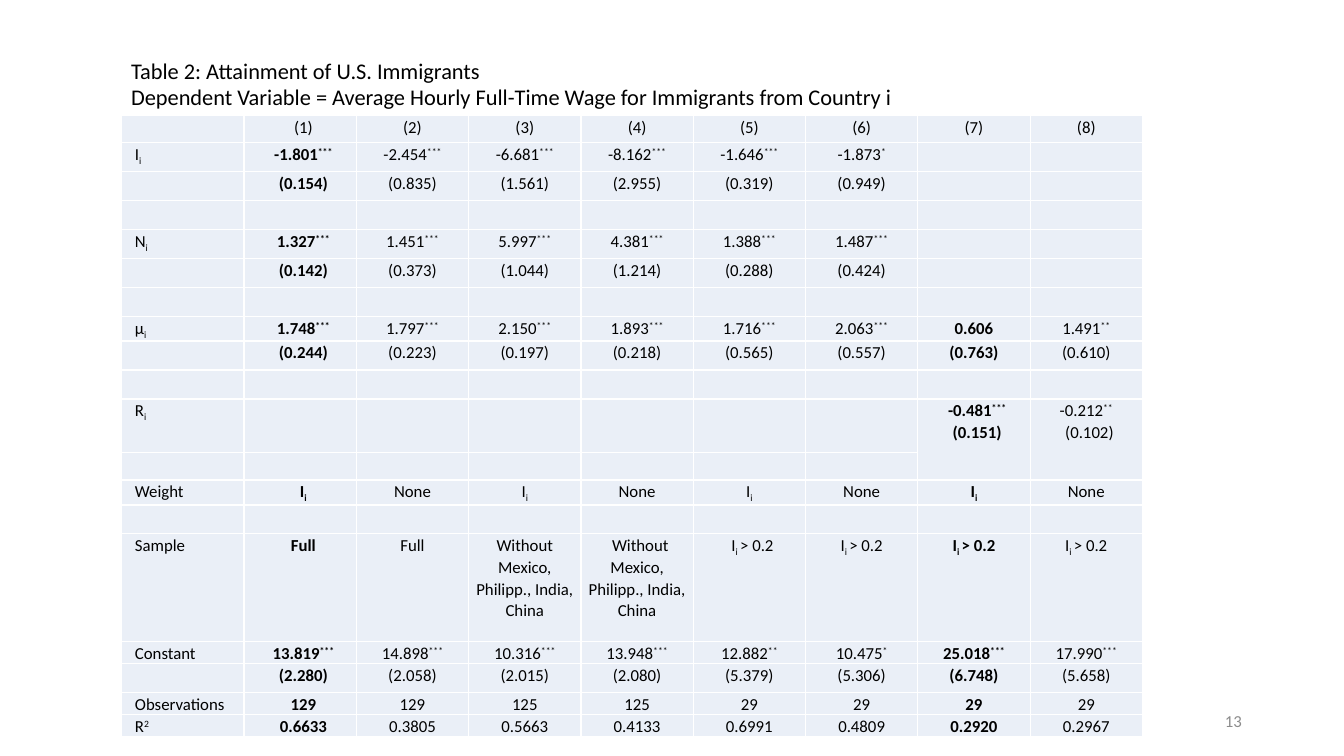
"""Build a slide with a regression table on the wages of immigrants."""
from dataclasses import dataclass

from lxml import etree
from pptx import Presentation
from pptx.dml.color import RGBColor
from pptx.enum.text import MSO_ANCHOR, MSO_AUTO_SIZE, PP_ALIGN
from pptx.oxml.ns import qn
from pptx.util import Cm, Pt

LEFT, CENTER, RIGHT = PP_ALIGN.LEFT, PP_ALIGN.CENTER, PP_ALIGN.RIGHT
TOP, MIDDLE = MSO_ANCHOR.TOP, MSO_ANCHOR.MIDDLE
NO_AUTOFIT = MSO_AUTO_SIZE.NONE


@dataclass(frozen=True)
class Theme:
    font: str = "Calibri"
    ink: str = "000000"
    muted: str = "8C8C8C"
    cell: str = "EAEFF7"
    title_size: int = 16
    table_size: int = 12
    number_size: int = 12


THEME = Theme()
TITLE = ("Table 2: Attainment of U.S. Immigrants\n"
         "Dependent Variable = Average Hourly Full-Time Wage for Immigrants from Country i")
PAGE_NUMBER = "13"

BIG_SOURCES = "Without Mexico, Philipp., India, China"
LARGE_SHARE = "I_i |> 0.2"
BLANK = (0.73, [])
ROWS = [
    (0.68, ["", "(1)", "(2)", "(3)", "(4)", "(5)", "(6)", "(7)", "(8)"]),
    (0.73, ["I_i", "-1.801^***", "-2.454^***", "-6.681^***", "-8.162^***", "-1.646^***", "-1.873^*"]),
    (0.73, ["", "(0.154)", "(0.835)", "(1.561)", "(2.955)", "(0.319)", "(0.949)"]),
    BLANK,
    (0.73, ["N_i", "1.327^***", "1.451^***", "5.997^***", "4.381^***", "1.388^***", "1.487^***"]),
    (0.73, ["", "(0.142)", "(0.373)", "(1.044)", "(1.214)", "(0.288)", "(0.424)"]),
    BLANK,
    (0.6, ["μ_i", "1.748^***", "1.797^***", "2.150^***", "1.893^***", "1.716^***", "2.063^***",
           "0.606", "1.491^**"]),
    (0.73, ["", "(0.244)", "(0.223)", "(0.197)", "(0.218)", "(0.565)", "(0.557)", "(0.763)", "(0.610)"]),
    BLANK,
    (1.34, ["R_i", "", "", "", "", "", "", "-0.481^***\n(0.151)", "-0.212^**\n(0.102)"]),
    (0.7, []),
    (0.63, ["Weight"] + ["I_i", "None"] * 4),
    BLANK,
    (2.72, ["Sample", "Full", "Full"] + [BIG_SOURCES] * 2 + [LARGE_SHARE] * 4),
    (0.55, ["Constant", "13.819^***", "14.898^***", "10.316^***", "13.948^***", "12.882^**",
            "10.475^*", "25.018^***", "17.990^***"]),
    (0.73, ["", "(2.280)", "(2.058)", "(2.015)", "(2.080)", "(5.379)", "(5.306)", "(6.748)", "(5.658)"]),
    (0.55, ["Observations", "129", "129", "125", "125", "29", "29", "29", "29"]),
    (0.55, ["R^2", "0.6633", "0.3805", "0.5663", "0.4133", "0.6991", "0.4809", "0.2920", "0.2967"]),
]
COLUMN_WIDTHS = [3.1] + [2.83] * 8
BOLD_COLUMNS = (1, 7)
INDENTED_CELLS = {(10, 7), (14, 4), (14, 5)}
MERGED_ROW, MERGED_COLUMNS = 10, (7, 8)
TABLE_LEFT, TABLE_TOP = 3.05, 2.92
BASELINES = {"_": "-25000", "^": "30000"}


def write(frame, text, *, size, color=THEME.ink, bold=False, align=LEFT,
          spacing=1.0, indent_first=False, indent_rest=False):
    """Fill a text frame; _ lowers, ^ raises and | returns to the line."""
    for index, line in enumerate(text.split("\n")):
        para = frame.add_paragraph() if index else frame.paragraphs[0]
        para.alignment = align
        para.line_spacing = spacing
        if indent_rest if index else indent_first:
            para._p.get_or_add_pPr().set("indent", str(Cm(0.16)))
        if not line:
            end = etree.SubElement(para._p, qn("a:endParaRPr"))
            end.set("sz", str(size * 100))
            continue
        for part in line.replace("_", "|_").replace("^", "|^").split("|"):
            span = para.add_run()
            span.text = part.lstrip("_^")
            span.font.name = THEME.font
            span.font.size = Pt(size)
            span.font.bold = bold
            span.font.color.rgb = RGBColor.from_string(color)
            if part[0] in BASELINES:
                span._r.get_or_add_rPr().set("baseline", BASELINES[part[0]])


def add_title(page):
    """Place the two title lines above the table."""
    box = page.shapes.title
    box.left, box.top = Cm(TABLE_LEFT), Cm(1.3)
    box.width, box.height = Cm(sum(COLUMN_WIDTHS)), Cm(1.62)
    frame = box.text_frame
    frame.word_wrap = True
    frame.auto_size = NO_AUTOFIT
    frame.vertical_anchor = TOP
    write(frame, TITLE, size=THEME.title_size)


def add_results(page):
    """Add the table of coefficients, errors and sample facts."""
    heights = [height for height, _ in ROWS]
    table = page.shapes.add_table(
        len(ROWS), len(COLUMN_WIDTHS), Cm(TABLE_LEFT), Cm(TABLE_TOP),
        Cm(sum(COLUMN_WIDTHS)), Cm(sum(heights))).table
    table.first_row = table.horz_banding = False
    for column, width in zip(table.columns, COLUMN_WIDTHS):
        column.width = Cm(width)
    for column in MERGED_COLUMNS:
        table.cell(MERGED_ROW, column).merge(table.cell(MERGED_ROW + 1, column))
    for row, (height, texts) in enumerate(ROWS):
        table.rows[row].height = Cm(height)
        for column in range(len(COLUMN_WIDTHS)):
            cell = table.cell(row, column)
            cell.fill.solid()
            cell.fill.fore_color.rgb = RGBColor.from_string(THEME.cell)
            cell.margin_left = cell.margin_right = Cm(0.19)
            cell.margin_top = cell.margin_bottom = 0
            write(cell.text_frame, texts[column] if column < len(texts) else "",
                  size=THEME.table_size, spacing=1.07,
                  bold=row > 0 and column in BOLD_COLUMNS,
                  align=CENTER if column else LEFT,
                  indent_first=column < 2 or (row, column) in INDENTED_CELLS,
                  indent_rest=True)


def add_page_number(page):
    """Put the page number at the lower right."""
    frame = page.shapes.add_textbox(Cm(23.93), Cm(17.65), Cm(7.62), Cm(1.02)).text_frame
    frame.word_wrap = True
    frame.vertical_anchor = MIDDLE
    write(frame, PAGE_NUMBER, size=THEME.number_size, color=THEME.muted, align=RIGHT)


def main():
    """Build and save the deck."""
    deck = Presentation()
    deck.slide_width, deck.slide_height = Cm(33.87), Cm(19.05)
    page = deck.slides.add_slide(deck.slide_layouts[5])
    add_title(page)
    add_results(page)
    add_page_number(page)
    deck.save("out.pptx")


if __name__ == "__main__":
    main()
